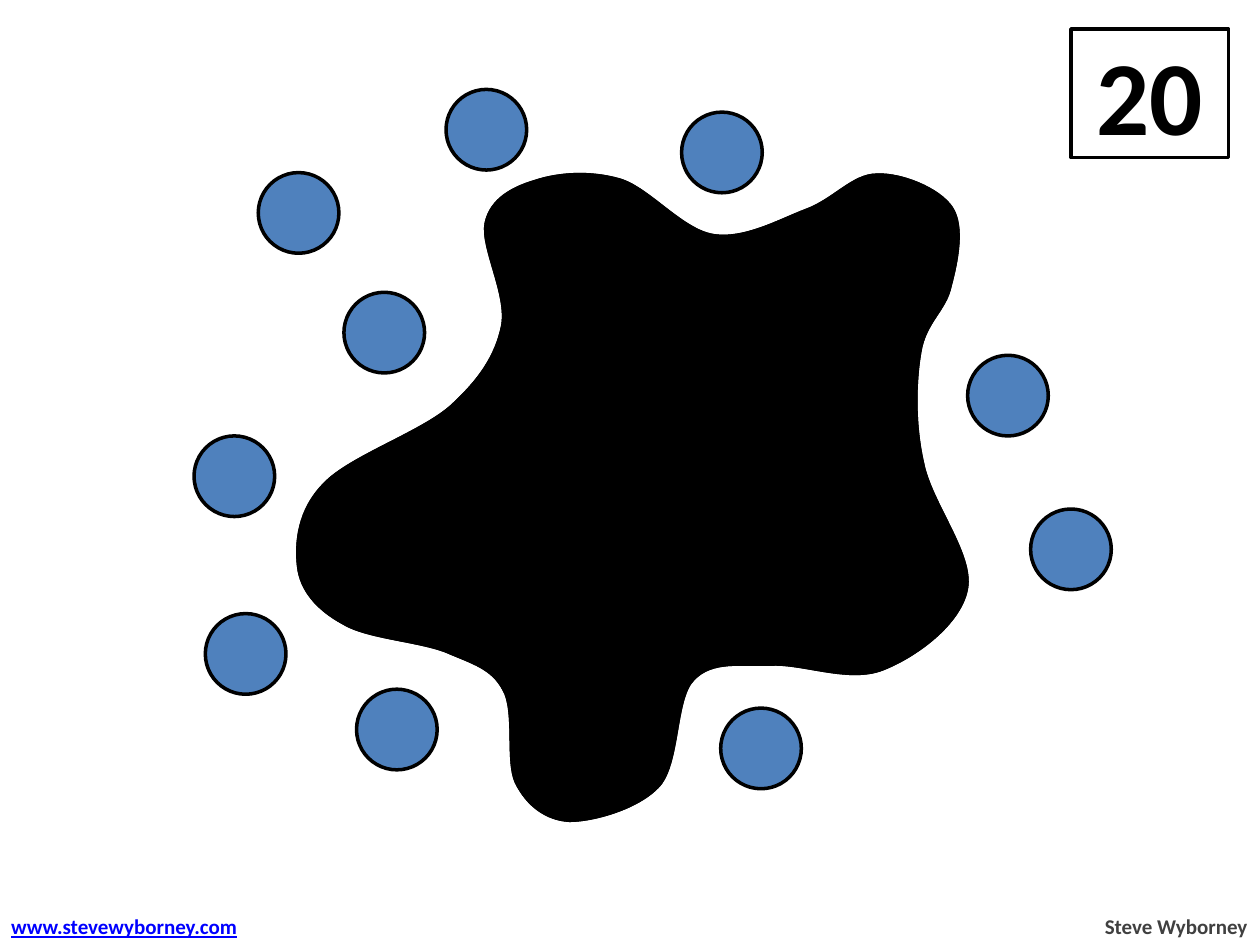
from lxml import etree
from pptx import Presentation
from pptx import util as u
from pptx.dml.color import RGBColor
from pptx.enum import shapes, text
from pptx.oxml.ns import qn

hues = {"white": "FFFFFF", "black": "000000", "dot": "4F81BD",
        "grey": "404040", "link": "0000FF"}
size = 0.64
dots = [
    (2.05, 1.37), (7.68, 2.82), (2.73, 4.14), (3.54, 0.71), (4.05, 4.69),
    (2.73, 2.32), (4.18, 1.68), (2.83, 5.47), (1.54, 3.46), (5.73, 2.27),
    (5.41, 0.89), (6.06, 3.31), (1.63, 4.87), (3.86, 3.2), (6.6, 1.63),
    (5.72, 5.62), (5, 3.62), (6.7, 4.53), (4.2, 5.75), (8.18, 4.04),
]
curves = [
    (2.52, 4.83, 2.39, 4.68, 2.37, 4.49),
    (2.35, 4.31, 2.37, 4.05, 2.58, 3.84),
    (2.78, 3.63, 3.34, 3.44, 3.58, 3.23),
    (3.81, 3.02, 3.94, 2.83, 3.99, 2.59),
    (4.04, 2.34, 3.82, 1.96, 3.86, 1.77),
    (3.9, 1.58, 4.08, 1.49, 4.25, 1.44),
    (4.43, 1.38, 4.68, 1.36, 4.92, 1.43),
    (5.15, 1.5, 5.41, 1.83, 5.66, 1.87),
    (5.91, 1.91, 6.19, 1.75, 6.4, 1.67),
    (6.62, 1.59, 6.77, 1.39, 6.96, 1.39),
    (7.15, 1.38, 7.45, 1.5, 7.55, 1.65),
    (7.65, 1.8, 7.59, 2.08, 7.54, 2.27),
    (7.5, 2.46, 7.34, 2.55, 7.3, 2.79),
    (7.26, 3.02, 7.25, 3.36, 7.32, 3.67),
    (7.38, 3.99, 7.72, 4.4, 7.67, 4.67),
    (7.62, 4.95, 7.26, 5.21, 7, 5.31),
    (6.74, 5.41, 6.38, 5.26, 6.13, 5.27),
    (5.88, 5.28, 5.65, 5.23, 5.5, 5.39),
    (5.35, 5.54, 5.39, 6.04, 5.23, 6.23),
    (5.07, 6.41, 4.71, 6.51, 4.52, 6.51),
    (4.34, 6.5, 4.19, 6.39, 4.1, 6.21),
    (4.02, 6.04, 4.1, 5.64, 4, 5.47),
    (3.91, 5.3, 3.76, 5.26, 3.55, 5.17),
    (3.33, 5.08, 2.91, 5.06, 2.72, 4.94),
]


def paint(shape, hue):
    shape.shadow.inherit = False
    shape.fill.solid()
    shape.fill.fore_color.rgb = RGBColor.from_string(hues[hue])
    shape.line.color.rgb = RGBColor.from_string(hues["black"])
    shape.line.width = u.Pt(2)


def write(shape, words, points, hue, align):
    para = shape.text_frame.paragraphs[0]
    para.alignment = align
    run = para.add_run()
    run.text = words
    run.font.name = "Calibri"
    run.font.size = u.Pt(points)
    run.font.bold = True
    run.font.color.rgb = RGBColor.from_string(hues[hue])
    return run


deck = Presentation()
deck.slide_width, deck.slide_height = u.Inches(10), u.Inches(7.5)
slide = deck.slides.add_slide(deck.slide_layouts[6])
items = slide.shapes

card = items.add_shape(shapes.MSO_SHAPE.RECTANGLE, u.Inches(8.5),
                       u.Inches(0.23), u.Inches(1.25), u.Inches(1.02))
paint(card, "white")
card.text_frame.vertical_anchor = text.MSO_ANCHOR.MIDDLE
write(card, "20", 60, "black", text.PP_ALIGN.CENTER)

for left, top in dots:
    dot = items.add_shape(shapes.MSO_SHAPE.OVAL, u.Inches(left),
                          u.Inches(top), u.Inches(size), u.Inches(size))
    paint(dot, "dot")

notes = [
    ("Steve Wyborney", 8.66, 1.34, "grey", text.PP_ALIGN.RIGHT),
    ("www.stevewyborney.com", -0.01, 2.05, "link", text.PP_ALIGN.LEFT),
]
for words, left, width, hue, align in notes:
    box = items.add_textbox(u.Inches(left), u.Inches(7.2),
                            u.Inches(width), u.Inches(0.3))
    box.text_frame.word_wrap = hue == "link"
    run = write(box, words, 12, hue, align)
    if hue == "link":
        run.font.underline = True

ends = [(u.Inches(x), u.Inches(y)) for *_, x, y in curves]
for alpha in (100, 40):
    pen = items.build_freeform(*ends[-1])
    pen.add_line_segments(ends, close=True)
    blob = pen.convert_to_shape()
    paint(blob, "black")
    lines = list(blob._element.iter(qn("a:lnTo")))
    for line, curve in zip(lines, curves):
        bend = etree.Element(qn("a:cubicBezTo"))
        for x, y in zip(curve[::2], curve[1::2]):
            etree.SubElement(bend, qn("a:pt"),
                             x=str(u.Inches(x) - blob.left),
                             y=str(u.Inches(y) - blob.top))
        line.getparent().replace(line, bend)
    if alpha < 100:
        tint = blob._element.spPr.find(qn("a:solidFill"))[0]
        etree.SubElement(tint, qn("a:alpha"), val=str(alpha * 1000))

deck.save("out.pptx")
